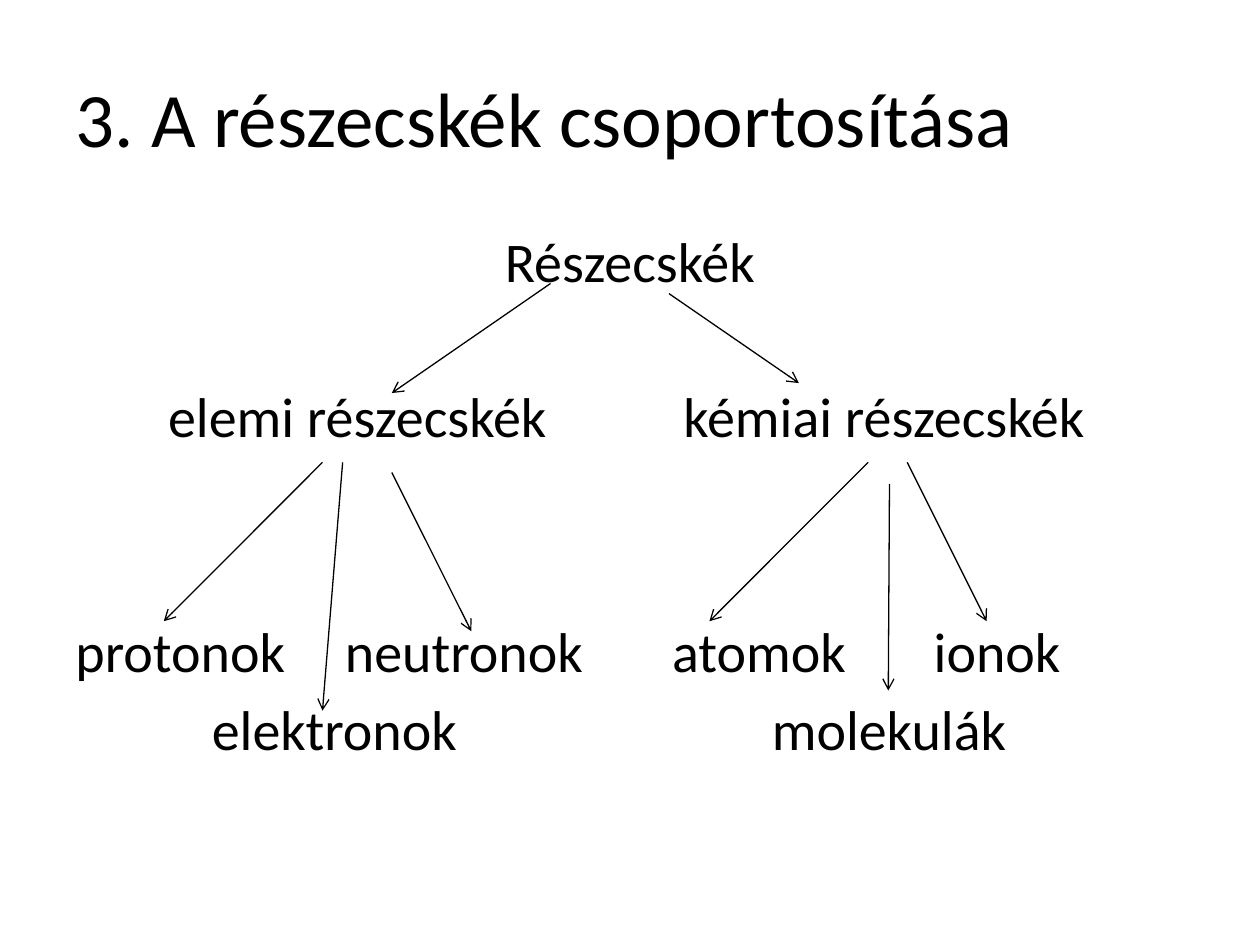
import pptx
import pptx.util
import pptx.dml.color
import pptx.enum.shapes
import pptx.enum.text
import pptx.oxml.ns
from lxml import etree

Pt = pptx.util.Pt
RGB = pptx.dml.color.RGBColor.from_string
ALIGN = pptx.enum.text.PP_ALIGN
ANCHOR = pptx.enum.text.MSO_ANCHOR
LINE = pptx.enum.shapes.MSO_CONNECTOR.STRAIGHT
qn = pptx.oxml.ns.qn

HUES = {"ink": "000000", "paper": "FFFFFF"}
FACE = "Calibri"

# Each row: space before, alignment, tab stops, text
ROWS = [
    (0, ALIGN.CENTER, [], "Részecskék"),
    (50, ALIGN.LEFT, [53, 347.5], "\telemi részecskék\tkémiai részecskék"),
    (96, ALIGN.LEFT, [154, 341, 490.5],
     "protonok\tneutronok\tatomok\tionok"),
    (6, ALIGN.LEFT, [78, 398], "\telektronok\tmolekulák"),
]

# Arrow ends, measured from the corner of the tree's box
ARROWS = [
    (278.6, 36, 187.9, 98.6),
    (346.3, 41.8, 420.5, 92.9),
    (148.3, 138.2, 57.6, 229),
    (187.9, 144, 233.3, 234.7),
    (159.8, 138.2, 148.3, 280.1),
    (460.1, 138.2, 369.4, 229),
    (482.4, 138.2, 527.8, 229),
    (472.3, 150.5, 471.6, 268.6),
]


def frame(slide, box, anchor):
    text = slide.shapes.add_textbox(*map(Pt, box)).text_frame
    text.word_wrap = True
    text.vertical_anchor = anchor
    return text


def style(para, size):
    para.font.name = FACE
    para.font.size = Pt(size)
    para.font.color.rgb = RGB(HUES["ink"])


def add_tabs(para, stops):
    tabs = etree.SubElement(para._p.get_or_add_pPr(), qn("a:tabLst"))
    for stop in stops:
        etree.SubElement(tabs, qn("a:tab"), pos=str(Pt(stop)), algn="l")


def add_arrow(slide, ends):
    arrow = slide.shapes.add_connector(LINE, *map(Pt, ends))
    arrow.line.color.rgb = RGB(HUES["ink"])
    arrow.line.width = Pt(0.75)
    etree.SubElement(arrow.line._get_or_add_ln(), qn("a:tailEnd"),
                     type="arrow")
    etree.SubElement(arrow._element.spPr, qn("a:effectLst"))


def add_title(slide, box):
    para = frame(slide, box, ANCHOR.MIDDLE).paragraphs[0]
    para.text = "3. A részecskék csoportosítása"
    style(para, 44)


def add_tree(slide, box):
    """Place the rows of particle names and the arrows between them."""
    text = frame(slide, box, ANCHOR.TOP)
    for i, (gap, align, stops, words) in enumerate(ROWS):
        para = text.add_paragraph() if i else text.paragraphs[0]
        para.text = words
        para.alignment = align
        if gap:
            para.space_before = Pt(gap)
        if stops:
            add_tabs(para, stops)
        style(para, 32)
    x, y = box[:2]
    for x1, y1, x2, y2 in ARROWS:
        add_arrow(slide, (x + x1, y + y1, x + x2, y + y2))


def main():
    deck = pptx.Presentation()
    deck.slide_width, deck.slide_height = Pt(720), Pt(540)
    slide = deck.slides.add_slide(deck.slide_layouts[6])
    fill = slide.background.fill
    fill.solid()
    fill.fore_color.rgb = RGB(HUES["paper"])
    add_title(slide, (36, 21.6, 648, 90))
    add_tree(slide, (36, 126, 648, 356.4))
    deck.save("out.pptx")


if __name__ == "__main__":
    main()
